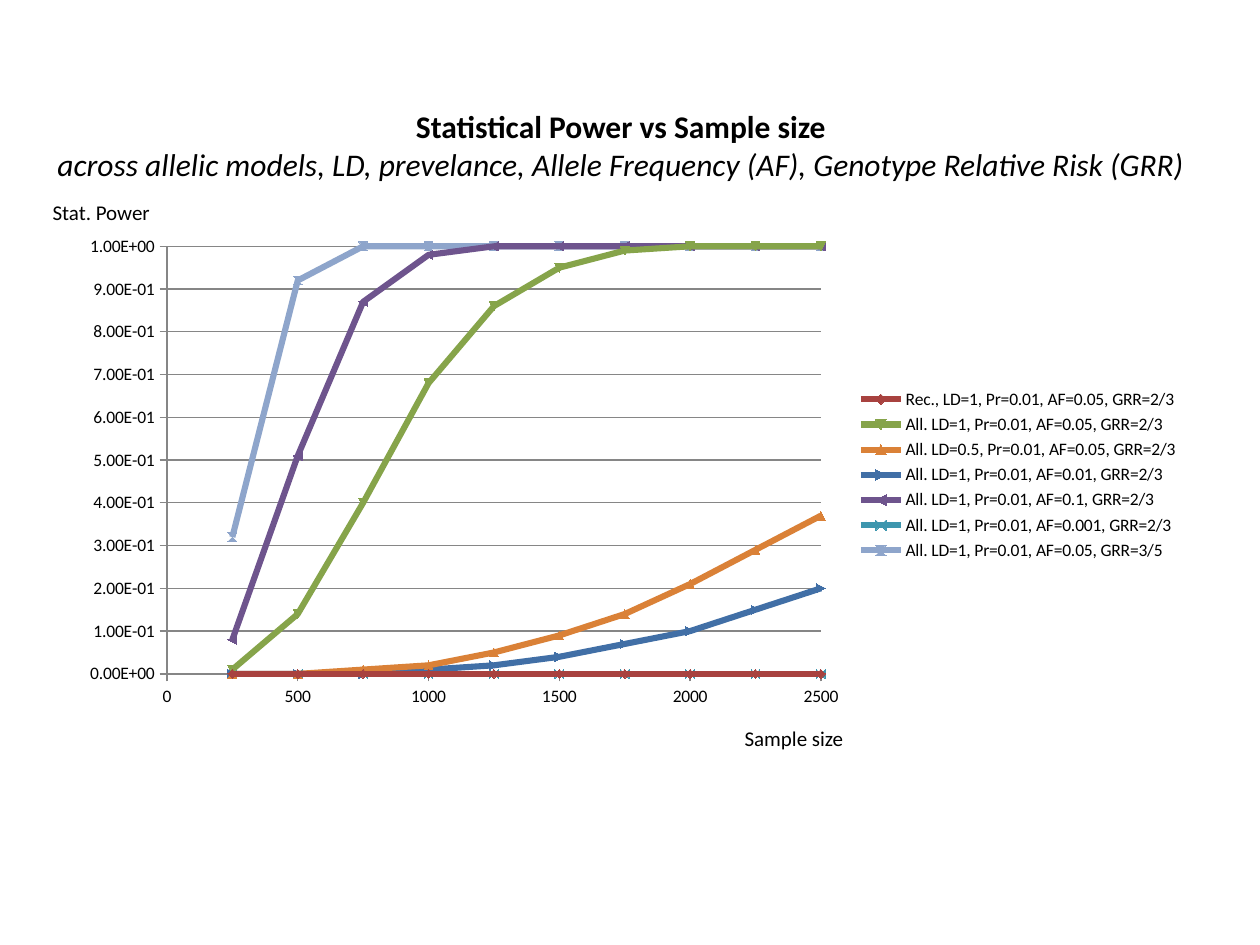
from dataclasses import dataclass
from typing import Any

from lxml.etree import SubElement
from pptx import Presentation
from pptx.chart.data import XyChartData
from pptx.dml.color import RGBColor as Rgb
from pptx.enum.chart import XL_CHART_TYPE as Kind
from pptx.enum.chart import XL_LEGEND_POSITION as Side
from pptx.enum.chart import XL_TICK_MARK as Tick
from pptx.enum.text import MSO_AUTO_SIZE as Fit
from pptx.enum.text import PP_ALIGN as Align
from pptx.oxml.ns import qn
from pptx.util import Cm, Pt


@dataclass(frozen=True)
class Theme:
    font: str = "Calibri"
    ink: Rgb = Rgb(0, 0, 0)
    grid: Rgb = Rgb(0x86, 0x86, 0x86)
    head: Pt = Pt(18)
    label: Pt = Pt(12)
    small: Pt = Pt(10)
    curve: Pt = Pt(3.5)
    rule: Pt = Pt(0.75)


@dataclass(frozen=True)
class Curve:
    name: str
    tint: str
    power: tuple[float, ...]


@dataclass(frozen=True)
class Line:
    text: str
    style: dict[str, Any]


@dataclass(frozen=True)
class Note:
    box: tuple[float, float, float, float]
    lines: tuple[Line, ...]
    align: Align = Align.LEFT
    wrap: bool = False


THEME = Theme()
SIZES = range(250, 2501, 250)
FLAT = (0,) * len(SIZES)
CURVES = (
    Curve("Rec., LD=1, Pr=0.01, AF=0.05, GRR=2/3", "A8423F", FLAT),
    Curve("All. LD=1, Pr=0.01, AF=0.05, GRR=2/3", "86A44A",
          (0.01, 0.14, 0.4, 0.68, 0.86, 0.95, 0.99, 1, 1, 1)),
    Curve("All. LD=0.5, Pr=0.01, AF=0.05, GRR=2/3", "DA8137",
          (0, 0, 0.01, 0.02, 0.05, 0.09, 0.14, 0.21, 0.29, 0.37)),
    Curve("All. LD=1, Pr=0.01, AF=0.01, GRR=2/3", "416FA6",
          (0, 0, 0, 0.01, 0.02, 0.04, 0.07, 0.1, 0.15, 0.2)),
    Curve("All. LD=1, Pr=0.01, AF=0.1, GRR=2/3", "6E548D",
          (0.08, 0.51, 0.87, 0.98, 1, 1, 1, 1, 1, 1)),
    Curve("All. LD=1, Pr=0.01, AF=0.001, GRR=2/3", "3D96AE", FLAT),
    Curve("All. LD=1, Pr=0.01, AF=0.05, GRR=3/5", "8EA5CB",
          (0.32, 0.92, 1, 1, 1, 1, 1, 1, 1, 1)),
)
LABEL = {"size": THEME.label}
NOTES = (
    Note((0.71, 2.03, 23.62, 1.8), (
        Line("Statistical Power vs Sample size", {"size": THEME.head, "bold": True}),
        Line("across allelic models, LD, prevelance, Allele Frequency (AF), "
             "Genotype Relative Risk (GRR)", {"size": THEME.head, "italic": True}),
    ), Align.CENTER, True),
    Note((14.76, 14.5, 2.54, 0.76), (Line("Sample size", LABEL),)),
    Note((0.81, 3.89, 2.51, 0.76), (Line("Stat. Power", LABEL),)),
)


def style(obj: Any, values: dict[str, Any]) -> None:
    for key, value in values.items():
        setattr(obj, key, value)


def ink(font: Any, values: dict[str, Any]) -> None:
    style(font, {"name": THEME.font, **values})
    font.color.rgb = THEME.ink


def stroke(line: Any, tint: Rgb, width: Pt) -> None:
    line.color.rgb = tint
    line.width = width


def place(owner: Any, after: str, inner: bool, spot: dict[str, float]) -> None:
    """Give a chart part a fixed place, in fractions of the chart."""
    for old in owner.findall(qn("c:layout")):
        owner.remove(old)
    layout = SubElement(owner, qn("c:layout"))
    manual = SubElement(layout, qn("c:manualLayout"))
    values = {"layoutTarget": "inner"} if inner else {}
    values |= {"xMode": "edge", "yMode": "edge", **spot}
    for tag, value in values.items():
        SubElement(manual, qn(f"c:{tag}")).set("val", str(value))
    prior = owner.find(qn(after)) if after else None
    if prior is None:
        owner.insert(0, layout)
    else:
        prior.addnext(layout)


def write(slide: Any, note: Note) -> None:
    frame = slide.shapes.add_textbox(*map(Cm, note.box)).text_frame
    style(frame, {"word_wrap": note.wrap, "auto_size": Fit.SHAPE_TO_FIT_TEXT})
    for i, line in enumerate(note.lines):
        para = frame.add_paragraph() if i else frame.paragraphs[0]
        para.alignment = note.align
        run = para.add_run()
        run.text = line.text
        ink(run.font, line.style)


def scale(axis: Any, top: float, step: float, code: str, grid: bool) -> None:
    style(axis, {"minimum_scale": 0, "maximum_scale": top, "major_unit": step,
                 "has_major_gridlines": grid, "has_title": False,
                 "major_tick_mark": Tick.OUTSIDE, "minor_tick_mark": Tick.NONE})
    style(axis.tick_labels, {"number_format": code,
                             "number_format_is_linked": False})
    ink(axis.tick_labels.font, {"size": THEME.small})
    stroke(axis.format.line, THEME.grid, THEME.rule)
    if grid:
        stroke(axis.major_gridlines.format.line, THEME.grid, THEME.rule)


def plot(slide: Any) -> None:
    data = XyChartData()
    for curve in CURVES:
        series = data.add_series(curve.name)
        for size, power in zip(SIZES, curve.power):
            series.add_data_point(size, power)
    box = map(Cm, (1.32, 4.57, 22.73, 9.91))
    chart = slide.shapes.add_chart(Kind.XY_SCATTER_SMOOTH, *box, data).chart
    style(chart, {"has_title": False, "has_legend": True})
    ink(chart.font, {"size": THEME.small})
    chart.plots[0].vary_by_categories = False

    # Axes and legend
    scale(chart.category_axis, 2500, 500, "General", False)
    scale(chart.value_axis, 1, 0.1, "0.00E+00", True)
    key = chart.legend
    style(key, {"position": Side.RIGHT, "include_in_layout": False})
    ink(key.font, {"size": THEME.small})
    area = chart.value_axis._element.getparent()
    place(area, "", True, {"x": 0.09, "y": 0.04, "w": 0.58, "h": 0.87})
    place(key._element, "c:legendPos", False,
          {"x": 0.7, "y": 0.32, "w": 0.29, "h": 0.37})

    # Curves; the index picks the automatic marker, from the diamond on
    for i, (series, curve) in enumerate(zip(chart.plots[0].series, CURVES), 1):
        tint = Rgb.from_string(curve.tint)
        series._element.find(qn("c:idx")).set("val", str(i))
        series.smooth = True
        stroke(series.format.line, tint, THEME.curve)
        mark = series.marker
        mark.size = 5
        mark.format.fill.solid()
        mark.format.fill.fore_color.rgb = tint
        stroke(mark.format.line, tint, THEME.rule)


def main() -> None:
    deck = Presentation()
    style(deck, {"slide_width": Cm(25.4), "slide_height": Cm(19.05)})
    slide = deck.slides.add_slide(deck.slide_layouts[6])
    plot(slide)
    for note in NOTES:
        write(slide, note)
    deck.save("out.pptx")


if __name__ == "__main__":
    main()
